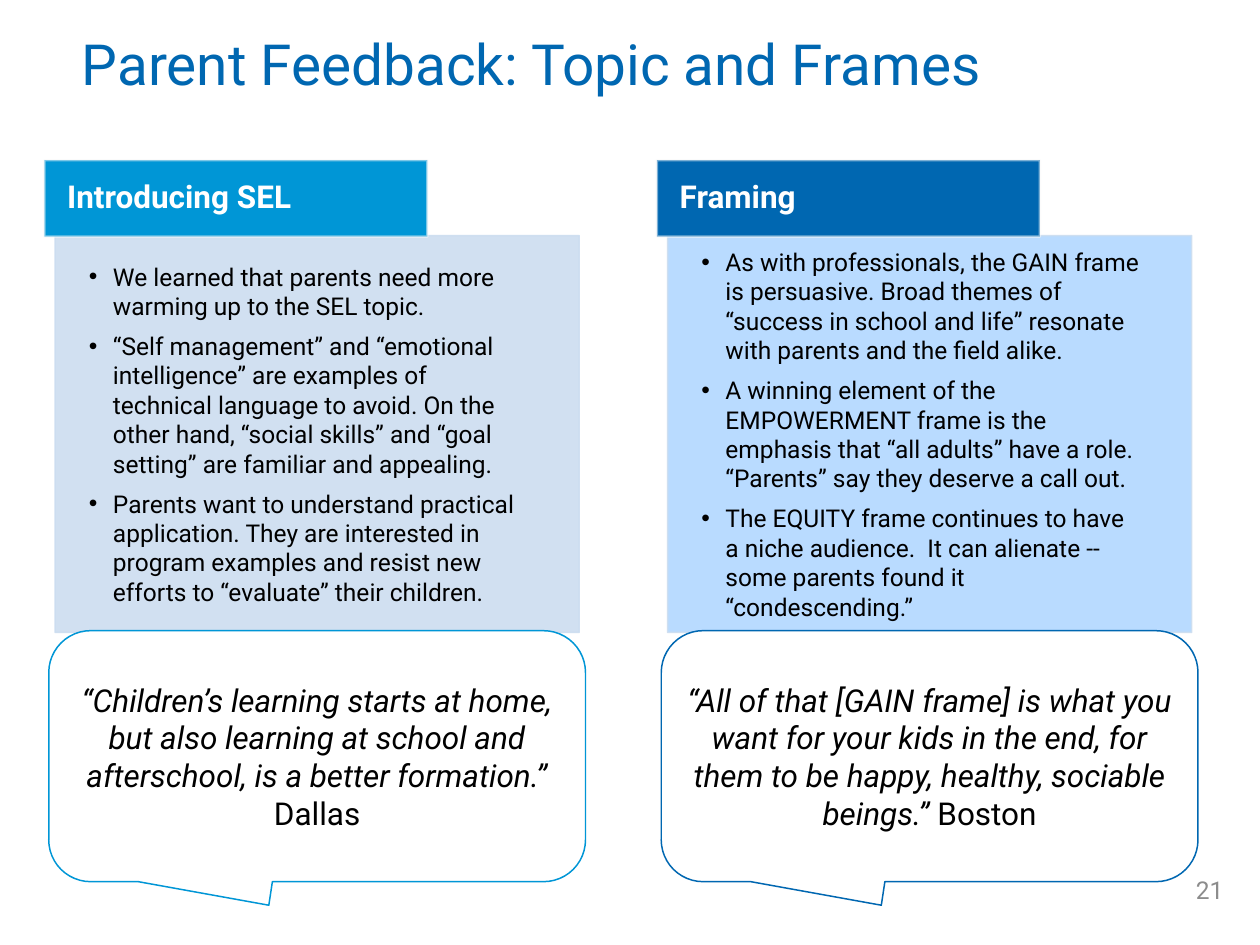
from lxml.etree import SubElement
from pptx import Presentation
from pptx.dml.color import RGBColor
from pptx.enum.shapes import MSO_SHAPE
from pptx.enum.text import MSO_ANCHOR, MSO_AUTO_SIZE, PP_ALIGN
from pptx.oxml.ns import qn
from pptx.util import Pt

FONT = "Roboto"
BLACK = RGBColor(0x00, 0x00, 0x00)
WHITE = RGBColor(0xFF, 0xFF, 0xFF)
GRAY = RGBColor(0x8C, 0x8C, 0x8C)
OFF_WHITE = RGBColor(0xF9, 0xF9, 0xF9)
SKY_BLUE = RGBColor(0x00, 0x96, 0xD6)
DEEP_BLUE = RGBColor(0x00, 0x67, 0xB1)
PALE_GRAY_BLUE = RGBColor(0xCC, 0xDD, 0xF0)
PALE_BLUE = RGBColor(0xB2, 0xD8, 0xFF)

COLUMN_STEP = 350
BULLET_INDENT = 13.7

# heading, accent colour, panel colour, bullets, quote, city
COLUMNS = [
    ("Introducing SEL", SKY_BLUE, PALE_GRAY_BLUE, [
        "We learned that parents need more warming up to the SEL topic.",
        "“Self management” and “emotional intelligence” are examples of "
        "technical language to avoid. On the other hand, “social skills” and "
        "“goal setting” are familiar and appealing.",
        "Parents want to understand practical application. They are interested "
        "in program examples and resist new efforts to “evaluate” their children.",
    ], "“Children’s learning starts at home, but also learning at school and "
       "afterschool, is a better formation.” ", "Dallas"),
    ("Framing", DEEP_BLUE, PALE_BLUE, [
        "As with professionals, the GAIN frame is persuasive. Broad themes of "
        "“success in school and life” resonate with parents and the field alike.",
        "A winning element of the EMPOWERMENT frame is the emphasis that “all "
        "adults” have a role. “Parents” say they deserve a call out.",
        "The EQUITY frame continues to have a niche audience.  It can alienate "
        "-- some parents found it “condescending.”",
    ], "“All of that [GAIN frame] is what you want for your kids in the end, for "
       "them to be happy, healthy, sociable beings.” ", "Boston"),
]


def format_font(font, size, color, bold=False, italic=False):
    font.name = FONT
    font.size = Pt(size)
    font.color.rgb = color
    font.bold = bold
    font.italic = italic


def set_alpha(fill_format_parent, percent):
    """Make the solid colour directly under an element translucent."""
    color = fill_format_parent.find(qn("a:solidFill"))[0]
    SubElement(color, qn("a:alpha"), val=str(percent * 1000))


def place(shape, left, top, width, height):
    shape.left, shape.top = Pt(left), Pt(top)
    shape.width, shape.height = Pt(width), Pt(height)


def set_frame(shape, margins=(7.2, 3.6, 7.2, 3.6)):
    frame = shape.text_frame
    frame.word_wrap = True
    frame.auto_size = MSO_AUTO_SIZE.NONE
    frame.vertical_anchor = MSO_ANCHOR.MIDDLE
    (frame.margin_left, frame.margin_top,
     frame.margin_right, frame.margin_bottom) = map(Pt, margins)
    return frame


def add_box(slide, kind, box, fill, line, line_width):
    shape = slide.shapes.add_shape(kind, *map(Pt, box))
    shape.shadow.inherit = False
    shape.fill.solid()
    shape.fill.fore_color.rgb = fill
    shape.line.color.rgb = line
    shape.line.width = Pt(line_width)
    return shape


def add_bullet(paragraph):
    properties = paragraph._p.get_or_add_pPr()
    properties.set("marL", str(Pt(BULLET_INDENT)))
    properties.set("indent", str(-Pt(BULLET_INDENT)))
    SubElement(properties, qn("a:buFont"), typeface="Arial")
    SubElement(properties, qn("a:buChar"), char="•")


def add_panel(slide, left, color, bullets):
    shape = add_box(slide, MSO_SHAPE.RECTANGLE, (left, 134.6, 299.5, 226.8),
                    color, PALE_GRAY_BLUE, 0.85)
    set_alpha(shape._element.spPr, 90)
    set_alpha(shape.line._ln, 90)
    frame = set_frame(shape, (19.4, 20.2, 29.5, 20.2))
    frame.text = "\n".join(bullets)
    for index, paragraph in enumerate(frame.paragraphs):
        add_bullet(paragraph)
        paragraph.level = 1
        paragraph.alignment = PP_ALIGN.LEFT
        if index:
            paragraph.space_before = Pt(6)
        format_font(paragraph.runs[0].font, 14, BLACK)


def add_heading(slide, left, color, text):
    shape = add_box(slide, MSO_SHAPE.RECTANGLE, (left, 91.6, 218.9, 43.7),
                    color, OFF_WHITE, 1.35)
    set_alpha(shape.line._ln, 50)
    frame = set_frame(shape, (13, 10, 13, 10))
    frame.text = text
    paragraph = frame.paragraphs[0]
    paragraph.alignment = PP_ALIGN.LEFT
    paragraph.line_spacing = 0.9
    format_font(paragraph.runs[0].font, 18, WHITE, bold=True)


def add_quote(slide, left, color, quote, city):
    shape = add_box(slide, MSO_SHAPE.ROUNDED_RECTANGULAR_CALLOUT,
                    (left, 360.4, 306.7, 143.4), WHITE, color, 0.85)
    for index, value in enumerate((-0.09, 0.594, 0.167)):
        shape.adjustments[index] = value
    paragraph = set_frame(shape).paragraphs[0]
    paragraph.alignment = PP_ALIGN.CENTER
    for text, italic in ((quote, True), (city, False)):
        run = paragraph.add_run()
        run.text = text
        format_font(run.font, 18, BLACK, italic=italic)


def set_title(slide, text):
    title = slide.shapes.title
    place(title, 39.6, 0, 564.5, 76.3)
    frame = set_frame(title)
    frame.text = text
    paragraph = frame.paragraphs[0]
    paragraph.alignment = PP_ALIGN.LEFT
    paragraph.line_spacing = 0.9
    format_font(paragraph.runs[0].font, 32.4, DEEP_BLUE)


def add_page_number(slide, number):
    box = slide.shapes.add_textbox(Pt(653), Pt(494), Pt(53.3), Pt(28.8))
    frame = set_frame(box)
    frame.text = number
    paragraph = frame.paragraphs[0]
    paragraph.alignment = PP_ALIGN.RIGHT
    format_font(paragraph.runs[0].font, 14, GRAY)


def main():
    presentation = Presentation()
    presentation.slide_width, presentation.slide_height = Pt(720), Pt(540)
    slide = presentation.slides.add_slide(presentation.slide_layouts[5])

    set_title(slide, "Parent Feedback: Topic and Frames")
    add_page_number(slide, "21")

    # Two columns: bullet panel, heading tab and parent quote
    for index, (heading, accent, panel, bullets, quote, city) in enumerate(COLUMNS):
        offset = index * COLUMN_STEP
        add_panel(slide, 31.5 + offset, panel, bullets)
        add_heading(slide, 25.4 + offset, accent, heading)
        add_quote(slide, 27.9 + offset, accent, quote, city)

    presentation.save("out.pptx")


if __name__ == "__main__":
    main()
